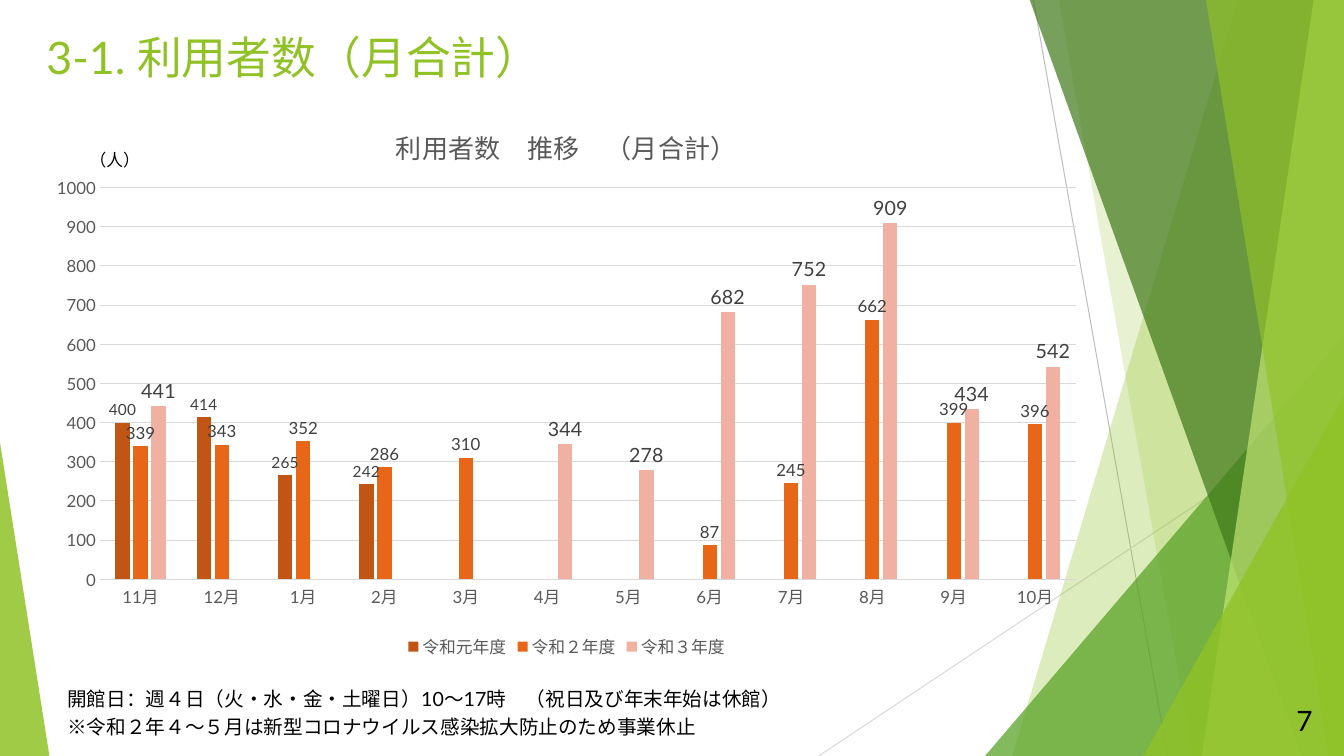
"""Build the monthly visitor count slide with a clustered column chart."""
import pptx
import pptx.chart.data
import pptx.dml.color
import pptx.enum.chart
import pptx.enum.shapes
import pptx.enum.text
import pptx.oxml
import pptx.util
from lxml import etree
from pptx.util import Inches

COLORS = {
    "lime": "90C226", "green": "54A021", "forest": "3F7819", "pale": "C0E474",
    "line": "BFBFBF", "grid": "D9D9D9", "axis": "595959", "label": "404040",
    "black": "000000", "first": "C05514", "second": "E76618", "third": "F0B0A2",
}
FONT = "Lato"
A = "{http://schemas.openxmlformats.org/drawingml/2006/main}"


def rgb(name):
    return pptx.dml.color.RGBColor.from_string(COLORS[name])


def style(font, size, color):
    font.name = FONT
    font.size = pptx.util.Pt(size)
    font.bold = False
    font.color.rgb = rgb(color)


prs = pptx.Presentation()
prs.slide_width, prs.slide_height = Inches(13.33), Inches(7.5)
s = prs.slides.add_slide(prs.slide_layouts[5])

for x1, y1, x2, y2, color in [(10.25, 0, 11.58, 7.5, "line"), (13.33, 4.03, 8.12, 7.5, "grid")]:
    line = s.shapes.add_connector(
        pptx.enum.shapes.MSO_CONNECTOR.STRAIGHT, Inches(x1), Inches(y1), Inches(x2), Inches(y2))
    line.line.color.rgb = rgb(color)
    line.line.width = pptx.util.Pt(0.75)
    etree.SubElement(line.element.spPr, A + "effectLst")

facets = [
    ("band", (12.28, 10.04), "lime", 30),
    ("band", (10.5, 11.83), "lime", 20),
    ("triangle", (9.77, 3.33, 3.56, 4.17, 1), "green", 72),
    ("band", (10.21, 12.91), "forest", 70),
    ("band", (13.03, 11.92), "pale", 70),
    ("band", (11.96, 13.18), "lime", 65),
    ("triangle", (11.34, 3.93, 1.99, 3.57, 1), "lime", 80),
    ("triangle", (0, 4.39, 0.49, 3.11, 0), "lime", 85),
]
for kind, geometry, color, alpha in facets:
    if kind == "band":
        top_x, bottom_x = geometry
        outline = [(Inches(x), Inches(y)) for x, y in
                   [(top_x, -0.01), (13.33, -0.01), (13.33, 7.5), (bottom_x, 7.5)]]
        builder = s.shapes.build_freeform(*outline[0])
        builder.add_line_segments(outline[1:], close=True)
        facet = builder.convert_to_shape()
    else:
        *box, apex = geometry
        facet = s.shapes.add_shape(
            pptx.enum.shapes.MSO_SHAPE.ISOSCELES_TRIANGLE, *[Inches(v) for v in box])
        facet.adjustments[0] = apex
    facet.shadow.inherit = False
    facet.line.fill.background()
    facet.fill.solid()
    facet.fill.fore_color.rgb = rgb(color)
    clr = facet.element.spPr.find(f"{A}solidFill/{A}srgbClr")
    etree.SubElement(clr, A + "alpha", val=str(alpha * 1000))

title = s.shapes.title
title.left, title.top, title.width, title.height = [Inches(v) for v in (0.36, 0.24, 11.5, 1.01)]
title.element.getparent().append(title.element)
tf = title.text_frame
tf.vertical_anchor = pptx.enum.text.MSO_ANCHOR.TOP
p = tf.paragraphs[0]
p.alignment = pptx.enum.text.PP_ALIGN.LEFT
r = p.add_run()
r.text = "3-1. 利用者数（月合計）"
style(r.font, 32, "lime")

months = [11, 12, *range(1, 11)]
data = pptx.chart.data.CategoryChartData()
data.categories = [f"{month}月" for month in months]
series_rows = [
    ("令和元年度", [400, 414, 265, 242] + [None] * 8, "first", 11),
    ("令和２年度", [339, 343, 352, 286, 310, None, None, 87, 245, 662, 399, 396], "second", 12),
    ("令和３年度", [441, None, None, None, None, 344, 278, 682, 752, 909, 434, 542], "third", 14),
]
for name, values, color, size in series_rows:
    data.add_series(name, values)
chart = s.shapes.add_chart(
    pptx.enum.chart.XL_CHART_TYPE.COLUMN_CLUSTERED,
    Inches(0.36), Inches(1.03), Inches(10.52), Inches(5.55), data).chart
style(chart.font, 10, "black")

chart.has_title = True
r = chart.chart_title.text_frame.paragraphs[0].add_run()
r.text = "利用者数　推移　（月合計）"
style(r.font, 18.6, "axis")

chart.has_legend = True
chart.legend.position = pptx.enum.chart.XL_LEGEND_POSITION.BOTTOM
chart.legend.include_in_layout = False
style(chart.legend.font, 12, "axis")

plot = chart.plots[0]
plot.gap_width, plot.overlap = 219, -27
plot.vary_by_categories = False
for series, (name, values, color, size) in zip(plot.series, series_rows):
    series.format.fill.solid()
    series.format.fill.fore_color.rgb = rgb(color)
    series.invert_if_negative = False
    labels = series.data_labels
    labels.show_value = True
    labels.position = pptx.enum.chart.XL_LABEL_POSITION.OUTSIDE_END
    style(labels.font, size, "label")

for axis in (chart.category_axis, chart.value_axis):
    axis.major_tick_mark = pptx.enum.chart.XL_TICK_MARK.NONE
    axis.minor_tick_mark = pptx.enum.chart.XL_TICK_MARK.NONE
    style(axis.tick_labels.font, 12, "axis")
chart.value_axis.minimum_scale, chart.value_axis.maximum_scale = 0, 1000
chart.value_axis.major_unit = 100
chart.value_axis.format.line.fill.background()
chart.value_axis.has_major_gridlines = True
for rule in (chart.category_axis.format.line, chart.value_axis.major_gridlines.format.line):
    rule.color.rgb = rgb("grid")
    rule.width = pptx.util.Pt(0.75)

C = "{http://schemas.openxmlformats.org/drawingml/2006/chart}"
plot_area = chart.element.find(f"{C}chart/{C}plotArea")
for old in plot_area.findall(C + "layout"):
    plot_area.remove(old)
layout = pptx.oxml.parse_xml(
    '<c:layout xmlns:c="http://schemas.openxmlformats.org/drawingml/2006/chart"><c:manualLayout>'
    '<c:layoutTarget val="inner"/><c:xMode val="edge"/><c:yMode val="edge"/>'
    '<c:x val="0.06"/><c:y val="0.15"/><c:w val="0.92"/><c:h val="0.7"/>'
    '</c:manualLayout></c:layout>')
plot_area.insert(0, layout)

notes = [
    (0.57, 7.04, 8.33, 0.34, "※令和２年４～５月は新型コロナウイルス感染拡大防止のため事業休止", 14),
    (0.79, 1.44, 0.74, 0.3, "（人）", 12),
    (0.57, 6.77, 8.33, 0.34, "開館日：週４日（火・水・金・土曜日）10～17時　（祝日及び年末年始は休館）", 14),
    (12.76, 6.93, 0.57, 0.44, "7", 20),
]
for *box, text, size in notes:
    tf = s.shapes.add_textbox(*[Inches(v) for v in box]).text_frame
    tf.word_wrap = True
    tf.auto_size = pptx.enum.text.MSO_AUTO_SIZE.SHAPE_TO_FIT_TEXT
    r = tf.paragraphs[0].add_run()
    r.text = text
    style(r.font, size, "black")

prs.save("out.pptx")
